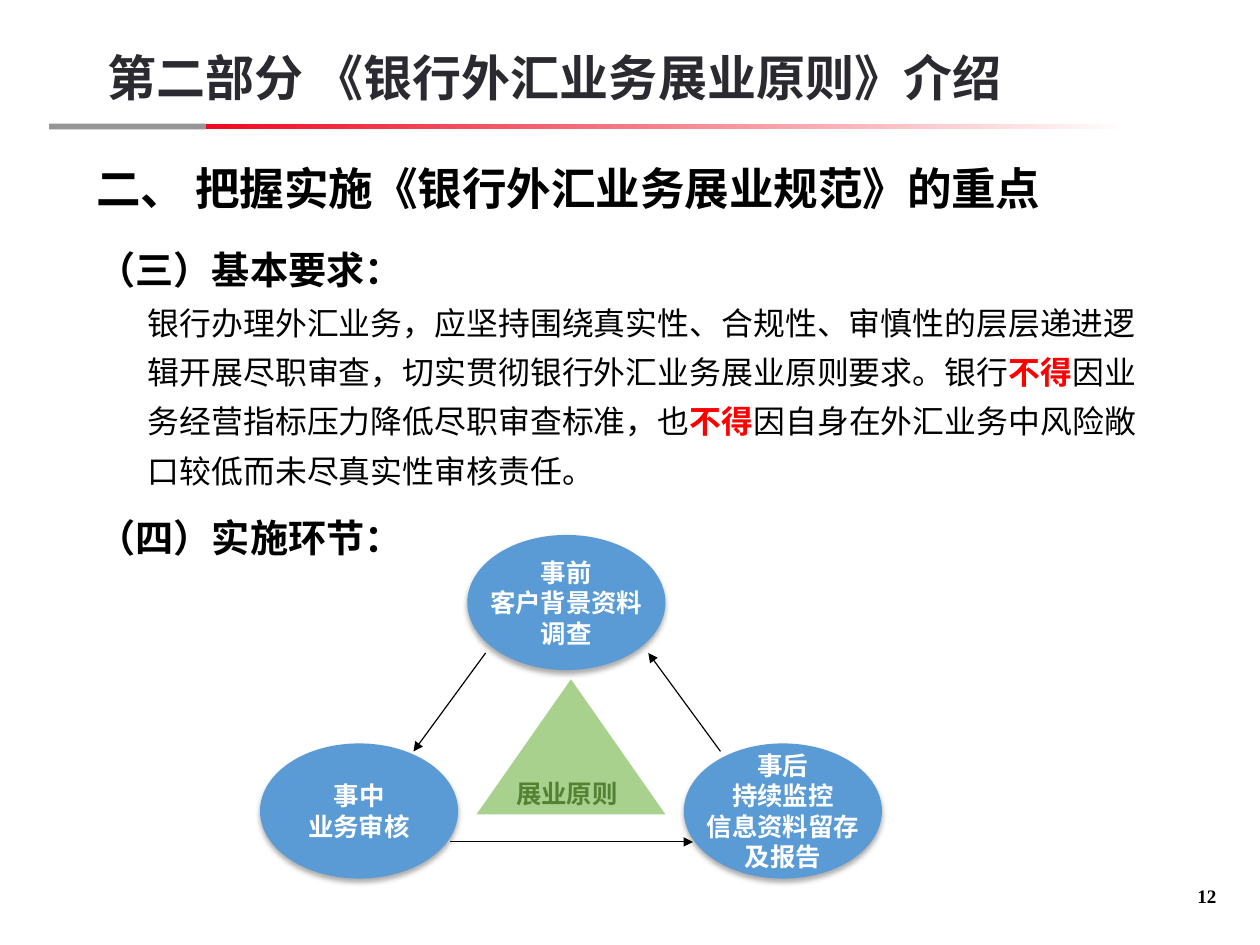
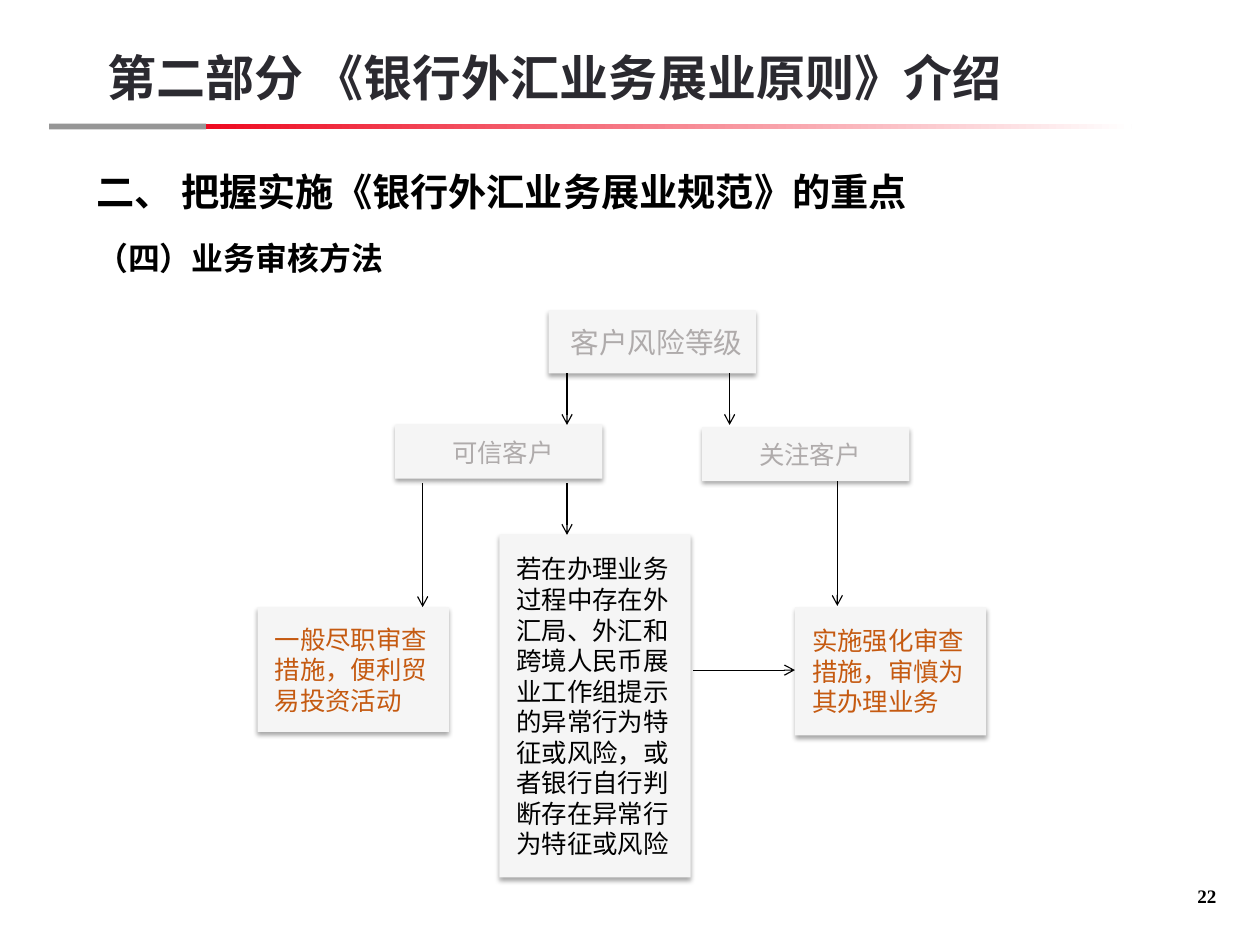
from lxml import etree
from pptx import Presentation
from pptx.dml.color import RGBColor
from pptx.enum import shapes, text
from pptx.oxml.ns import qn
from pptx.util import Inches, Pt

BLACK = RGBColor(0x00, 0x00, 0x00)
WHITE = RGBColor(0xFF, 0xFF, 0xFF)
INK = RGBColor(0x2B, 0x2A, 0x30)
GREY = RGBColor(0x96, 0x96, 0x96)
BAND_RED = RGBColor(0xEE, 0x0A, 0x20)
WARNING_RED = RGBColor(0xFF, 0x00, 0x00)
BLUE = RGBColor(0x5B, 0x9B, 0xD5)
LIGHT_GREEN = RGBColor(0xA9, 0xD1, 0x8E)
DARK_GREEN = RGBColor(0x54, 0x82, 0x35)
PALE = RGBColor(0xF5, 0xF5, 0xF5)
MUTED = RGBColor(0xAF, 0xAB, 0xAB)
ORANGE = RGBColor(0xC5, 0x5A, 0x11)

SANS = "Noto Sans CJK SC"
SERIF = "Times New Roman"
LEFT, CENTER, RIGHT = text.PP_ALIGN.LEFT, text.PP_ALIGN.CENTER, text.PP_ALIGN.RIGHT
TOP, MIDDLE, BOTTOM = text.MSO_ANCHOR.TOP, text.MSO_ANCHOR.MIDDLE, text.MSO_ANCHOR.BOTTOM


def write(shape, lines, size, color, bold=False, font=SANS, align=LEFT,
          anchor=TOP, wrap=True, insets=(0, 0, 0, 0)):
    """Fill a shape with evenly formatted paragraphs and return its paragraphs."""
    frame = shape.text_frame
    frame.text = "\n".join(lines)
    frame.auto_size = text.MSO_AUTO_SIZE.NONE
    frame.word_wrap = wrap
    frame.vertical_anchor = anchor
    (frame.margin_left, frame.margin_top,
     frame.margin_right, frame.margin_bottom) = map(Inches, insets)
    for paragraph in frame.paragraphs:
        properties = paragraph._p.get_or_add_pPr()
        properties.set("marL", "0")
        properties.set("indent", "0")
        etree.SubElement(properties, qn("a:buNone"))
        paragraph.alignment = align
        paragraph.line_spacing = Pt(round(size * 1.2, 1))
        paragraph.space_before = Pt(0)
        paragraph.font.name = font
        paragraph.font.size = Pt(size)
        paragraph.font.bold = bold
        paragraph.font.color.rgb = color
    return frame.paragraphs


def add_figure(slide, kind, place, fill, shadow=None):
    """Add a borderless shape; shadow is (opacity %, blur pt, distance pt)."""
    shape = slide.shapes.add_shape(kind, *map(Inches, place))
    shape.fill.solid()
    shape.fill.fore_color.rgb = fill
    shape.line.fill.background()
    shape.shadow.inherit = False
    if shadow:
        opacity, blur, distance = shadow
        effects = shape.element.spPr.find(qn("a:effectLst"))
        outer = etree.SubElement(
            effects, qn("a:outerShdw"), blurRad=str(Pt(blur)), dist=str(Pt(distance)),
            dir="5400000", algn="t", rotWithShape="0")
        black = etree.SubElement(outer, qn("a:srgbClr"), val="000000")
        etree.SubElement(black, qn("a:alpha"), val=str(opacity * 1000))
    return shape


presentation = Presentation()
presentation.slide_width = Inches(11)
presentation.slide_height = Inches(8.25)
master = presentation.slide_master
for root in (presentation.element, master.element):
    for east_asian in root.iter(qn("a:ea")):
        east_asian.set("typeface", SANS)

# Shared frame: title, section heading, page number
slides = []
for number, title_size, title_font, body_place in (
        ("12", 28, SANS, (0.85, 2.15, 9.43, 2.9)),
        ("22", 24, SERIF, (0.84, 2.08, 9.43, 0.48))):
    slide = presentation.slides.add_slide(presentation.slide_layouts[1])
    slides.append(slide)
    title, body = slide.shapes.title, slide.placeholders[1]
    heading = slide.shapes.add_textbox(0, 0, 0, 0)
    page = slide.shapes.add_textbox(0, 0, 0, 0)
    for shape, place in ((title, (0.84, 1.12, 9.46, 0.75)), (body, body_place),
                         (heading, (0.94, 0.18, 9.36, 0.75)),
                         (page, (10.17, 7.5, 0.45, 0.42))):
        shape.left, shape.top, shape.width, shape.height = map(Inches, place)
    write(title, ["二、 把握实施《银行外汇业务展业规范》的重点"], title_size, BLACK,
          True, title_font, anchor=BOTTOM)
    write(heading, ["第二部分 《银行外汇业务展业原则》介绍"], 30.8, INK, True, anchor=BOTTOM)
    write(page, [number], 12, BLACK, True, SERIF, RIGHT, BOTTOM)
requirements, review = slides

# The two-part rule under the heading belongs to the master
grey_band = add_figure(requirements, shapes.MSO_SHAPE.RECTANGLE, (0.43, 1.08, 1.37, 0.05), GREY)
red_band = add_figure(requirements, shapes.MSO_SHAPE.RECTANGLE, (1.8, 1.08, 8.08, 0.05), BAND_RED)
red_band.fill.gradient()
red_band.fill.gradient_angle = 0
for stop, color in zip(red_band.fill.gradient_stops, (BAND_RED, WHITE)):
    stop.color.rgb = color
for shape_id, band in enumerate((grey_band, red_band), 20):
    band.element.nvSpPr.cNvPr.set("id", str(shape_id))
    master.shapes.element.append(band.element)

# Slide 1: requirements and the three stages
paragraphs = write(requirements.placeholders[1], [
    "（三）基本要求：",
    "银行办理外汇业务，应坚持围绕真实性、合规性、审慎性的层层递进逻",
    "辑开展尽职审查，切实贯彻银行外汇业务展业原则要求。银行不得因业",
    "务经营指标压力降低尽职审查标准，也不得因自身在外汇业务中风险敞",
    "口较低而未尽真实性审核责任。",
    "（四）实施环节：",
], 24, BLACK, True)
paragraphs[-1].space_before = Pt(15.6)
for paragraph in paragraphs[1:-1]:
    paragraph.level = 1
    paragraph._p.pPr.set("marL", str(Inches(0.44)))
    paragraph.space_before = Pt(7)
    paragraph.line_spacing = Pt(24)
    paragraph.font.size = Pt(20)
    paragraph.font.bold = False
    before, ban, after = paragraph.text.partition("不得")
    if ban:
        paragraph.clear()
        for part in (before, ban, after):
            run = paragraph.add_run()
            run.text = part
            if part == ban:
                run.font.bold = True
                run.font.color.rgb = WARNING_RED

for left, top, lines in (
        (4.08, 4.67, ["事前", "客户背景资料\v调查"]),
        (2.27, 6.49, ["事中", "业务审核"]),
        (5.97, 6.49, ["事后", "持续监控", "信息资料留存\v及报告"])):
    stage = add_figure(requirements, shapes.MSO_SHAPE.OVAL, (left, top, 1.73, 1.18),
                       BLUE, (32, 3.5, 2.2))
    write(stage, lines, 16, WHITE, True, "Arial", CENTER, MIDDLE, wrap=False)

principle = add_figure(requirements, shapes.MSO_SHAPE.ISOSCELES_TRIANGLE,
                       (4.16, 5.93, 1.65, 1.18), LIGHT_GREEN)
write(principle, ["展业原则"], 16, DARK_GREEN, True, "Arial", CENTER, BOTTOM,
      wrap=False, insets=(0, 0, 0.07, 0.05))

# Slide 2: review method by customer risk level
write(review.placeholders[1], ["（四）业务审核方法"], 20, BLACK, True)
for place, label, size, color, align in (
        ((4.79, 2.71, 1.81, 0.55), "客户风险等级", 18, MUTED, CENTER),
        ((3.45, 3.71, 1.81, 0.47), "可信客户", 16, MUTED, CENTER),
        ((6.13, 3.73, 1.81, 0.47), "关注客户", 16, MUTED, CENTER),
        ((2.25, 5.3, 1.67, 1.09), "一般尽职审查措施，便利贸易投资活动", 16, ORANGE, LEFT),
        ((4.36, 4.67, 1.67, 2.99),
         "若在办理业务过程中存在外汇局、外汇和跨境人民币展业工作组提示的异常行为特征或风险，"
         "或者银行自行判断存在异常行为特征或风险", 16, BLACK, LEFT),
        ((6.94, 5.3, 1.67, 1.12), "实施强化审查措施，审慎为其办理业务", 16, ORANGE, LEFT)):
    box = add_figure(review, shapes.MSO_SHAPE.RECTANGLE, place, PALE, (35, 3.1, 1.8))
    write(box, [label], size, color, align=align, anchor=MIDDLE,
          insets=(0.15, 0.05, 0.08, 0.05))

# Arrows of both diagrams
for slide, head, routes in (
        (requirements, "triangle", [
            (6.29, 6.56, 5.66, 5.7), (4.24, 5.7, 3.61, 6.56), (3.93, 7.35, 6.05, 7.35)]),
        (review, "arrow", [
            (4.95, 3.26, 4.95, 3.71), (6.37, 3.26, 6.37, 3.71), (4.95, 4.22, 4.95, 4.67),
            (3.69, 4.22, 3.69, 5.3), (7.31, 4.2, 7.31, 5.29), (6.05, 5.85, 6.94, 5.85)])):
    for route in routes:
        arrow = slide.shapes.add_connector(shapes.MSO_CONNECTOR.STRAIGHT, *map(Inches, route))
        arrow.line.color.rgb = BLACK
        arrow.line.width = Pt(0.75)
        etree.SubElement(arrow.line._get_or_add_ln(), qn("a:tailEnd"), type=head)
        etree.SubElement(arrow.element.spPr, qn("a:effectLst"))

presentation.save("out.pptx")
